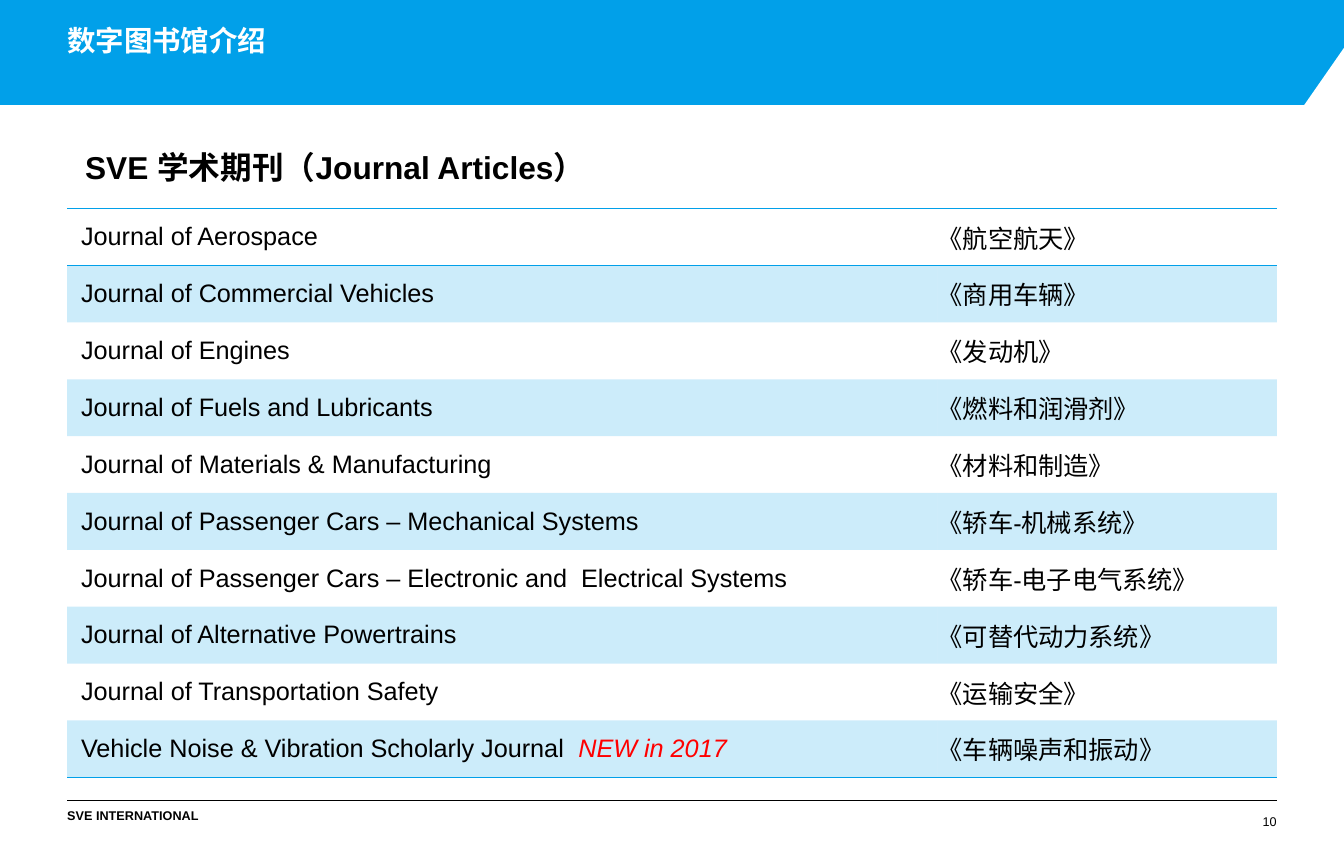
from dataclasses import dataclass

from lxml import etree
from pptx import Presentation
from pptx.dml.color import RGBColor
from pptx.enum import shapes, text
from pptx.oxml import ns
from pptx.util import Cm, Pt


@dataclass(frozen=True)
class Theme:
    face: str = "Arial"
    blue: str = "01A0E9"
    white: str = "FFFFFF"
    black: str = "000000"
    red: str = "FF0000"
    alpha: int = 20
    title: int = 18
    head: int = 20
    cell: int = 16
    foot: int = 8


THEME = Theme()


@dataclass(frozen=True)
class Label:
    words: str
    box: tuple[float, float, float, float]
    size: int
    bold: bool = False
    align: text.PP_ALIGN = text.PP_ALIGN.LEFT
    anchor: text.MSO_ANCHOR = text.MSO_ANCHOR.TOP
    color: str = THEME.black
    pad: tuple[float, float] = (0, 0)


@dataclass(frozen=True)
class Journal:
    name: str
    chinese: str
    note: str = ""


WIDTH, HEIGHT = 30, 19.05
LEFT, SPAN = 1.5, 27
ROW = 1.27
PANEL = 13.46
PLAIN = "{2D5ABB26-0587-4C30-8999-92F81FD0307C}"

TITLE = Label("数字图书馆介绍", (LEFT, 0.52, SPAN, 1.85), THEME.title, True,
              color=THEME.white)
LABELS = [
    Label("SVE 学术期刊（Journal Articles）", (1.65, 3.18, 26.37, 1.12),
          THEME.head, True, pad=(0.25, 0.13)),
    Label("SVE INTERNATIONAL", (LEFT, 18.04, 7, 0.33), THEME.foot, True),
    Label("10", (21.5, 18.04, 7, 0.48), THEME.foot,
          align=text.PP_ALIGN.RIGHT, anchor=text.MSO_ANCHOR.BOTTOM),
]
JOURNALS = [
    Journal("Journal of Aerospace", "《航空航天》"),
    Journal("Journal of Commercial Vehicles", "《商用车辆》"),
    Journal("Journal of Engines", "《发动机》"),
    Journal("Journal of Fuels and Lubricants", "《燃料和润滑剂》"),
    Journal("Journal of Materials & Manufacturing", "《材料和制造》"),
    Journal("Journal of Passenger Cars – Mechanical Systems", "《轿车-机械系统》"),
    Journal("Journal of Passenger Cars – Electronic and  Electrical Systems",
            "《轿车-电子电气系统》"),
    Journal("Journal of Alternative Powertrains", "《可替代动力系统》"),
    Journal("Journal of Transportation Safety", "《运输安全》"),
    Journal("Vehicle Noise & Vibration Scholarly Journal  ", "《车辆噪声和振动》",
            "NEW in 2017"),
]


def paint(fill, color: str) -> None:
    fill.solid()
    fill.fore_color.rgb = RGBColor.from_string(color)


def style(font, size: int, color: str, bold: bool = False) -> None:
    font.name, font.size, font.bold = THEME.face, Pt(size), bold
    font.color.rgb = RGBColor.from_string(color)


def write(shape, label: Label) -> None:
    shape.left, shape.top, shape.width, shape.height = map(Cm, label.box)
    frame = shape.text_frame
    frame.word_wrap = True
    frame.auto_size = text.MSO_AUTO_SIZE.NONE
    frame.vertical_anchor = label.anchor
    frame.margin_left = frame.margin_right = Cm(label.pad[0])
    frame.margin_top = frame.margin_bottom = Cm(label.pad[1])
    frame.text = label.words
    para = frame.paragraphs[0]
    para.alignment = label.align
    style(para.font, label.size, label.color, label.bold)


def panel(slide, top: float) -> None:
    base, edge = top + PANEL, top + 1.28
    form = slide.shapes.build_freeform(0, Cm(base), scale=1.0)
    points = [(WIDTH, base), (WIDTH, top), (29.11, edge), (0, edge)]
    form.add_line_segments([(Cm(x), Cm(y)) for x, y in points])
    shape = form.convert_to_shape()
    shape.shadow.inherit = False
    paint(shape.fill, THEME.white)
    shape.line.fill.background()


def rule(slide, y: float) -> None:
    line = slide.shapes.add_connector(
        shapes.MSO_CONNECTOR.STRAIGHT, Cm(LEFT), Cm(y), Cm(LEFT + SPAN), Cm(y))
    line.line.color.rgb = RGBColor.from_string(THEME.black)
    line.line.width = Pt(1)
    etree.SubElement(line._element.spPr, ns.qn("a:effectLst"))


def border(cell, side: str) -> None:
    edge = etree.SubElement(cell._tc.get_or_add_tcPr(), ns.qn(f"a:ln{side}"),
                            w=str(Pt(1)))
    fill = etree.SubElement(edge, ns.qn("a:solidFill"))
    etree.SubElement(fill, ns.qn("a:srgbClr"), val=THEME.blue)


def fill_cell(cell, words: str, indent: float, shade: bool, sides: str):
    cell.margin_left = Cm(indent)
    cell.margin_right = cell.margin_top = cell.margin_bottom = 0
    cell.vertical_anchor = text.MSO_ANCHOR.MIDDLE
    for side in sides:
        border(cell, side)
    if shade:
        paint(cell.fill, THEME.blue)
        color = cell._tc.tcPr.find(f"{ns.qn('a:solidFill')}/{ns.qn('a:srgbClr')}")
        etree.SubElement(color, ns.qn("a:alpha"), val=str(THEME.alpha * 1000))
    else:
        cell.fill.background()
    para = cell.text_frame.paragraphs[0]
    para.add_run().text = words
    style(para.font, THEME.cell, THEME.black)
    return para


def grid(slide, items: list[Journal]) -> None:
    count = len(items)
    table = slide.shapes.add_table(count, 2, Cm(LEFT), Cm(4.66), Cm(SPAN),
                                   Cm(ROW * count)).table
    table.first_row = table.horz_banding = False
    table._tbl.tblPr.find(ns.qn("a:tableStyleId")).text = PLAIN
    for column, width in zip(table.columns, (19.43, 7.57)):
        column.width = Cm(width)
    edges = {0: "TB", count - 1: "B"}
    for i, item in enumerate(items):
        shade, sides = i % 2 == 1, edges.get(i, "")
        para = fill_cell(table.cell(i, 0), item.name, 0.31, shade, sides)
        fill_cell(table.cell(i, 1), item.chinese, 0, shade, sides)
        if item.note:
            run = para.add_run()
            run.text = item.note
            run.font.italic = True
            run.font.color.rgb = RGBColor.from_string(THEME.red)


def main() -> None:
    deck = Presentation()
    deck.slide_width, deck.slide_height = Cm(WIDTH), Cm(HEIGHT)
    slide = deck.slides.add_slide(deck.slide_layouts.get_by_name("Title Only"))

    # Blue ground, white panels and title
    paint(slide.background.fill, THEME.blue)
    for top in (1.07, HEIGHT - PANEL):
        panel(slide, top)
    title = slide.shapes.title
    slide.shapes._spTree.append(title._element)
    write(title, TITLE)

    # Journal table
    grid(slide, JOURNALS)

    # Heading and footer
    rule(slide, 17.88)
    for label in LABELS:
        write(slide.shapes.add_textbox(0, 0, 0, 0), label)

    deck.save("out.pptx")


if __name__ == "__main__":
    main()
